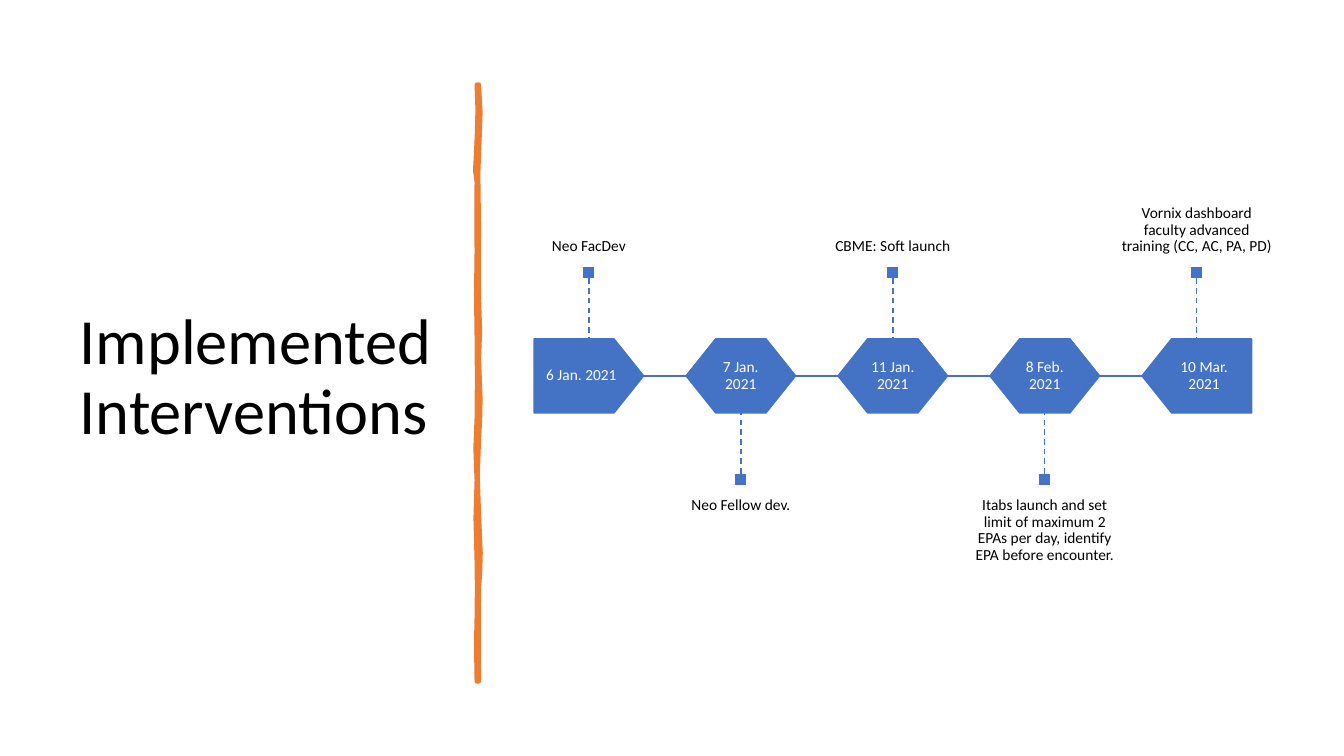
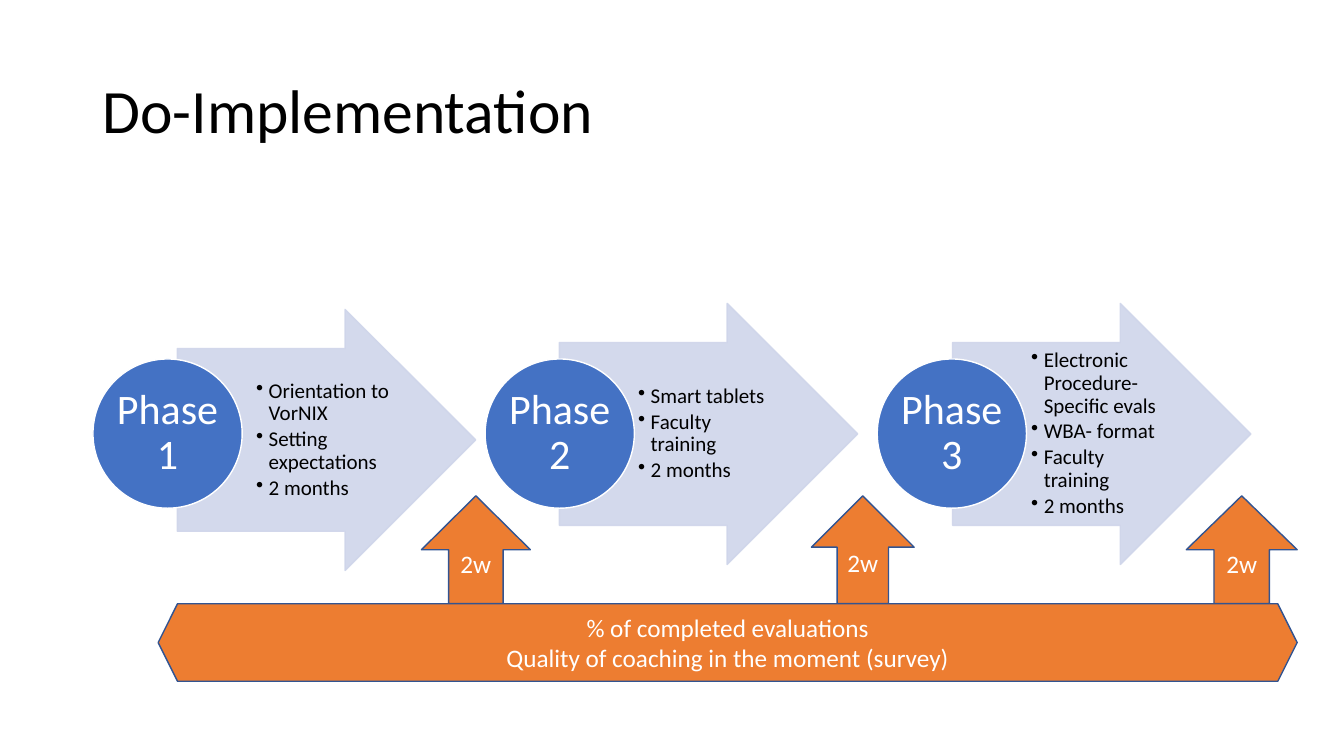
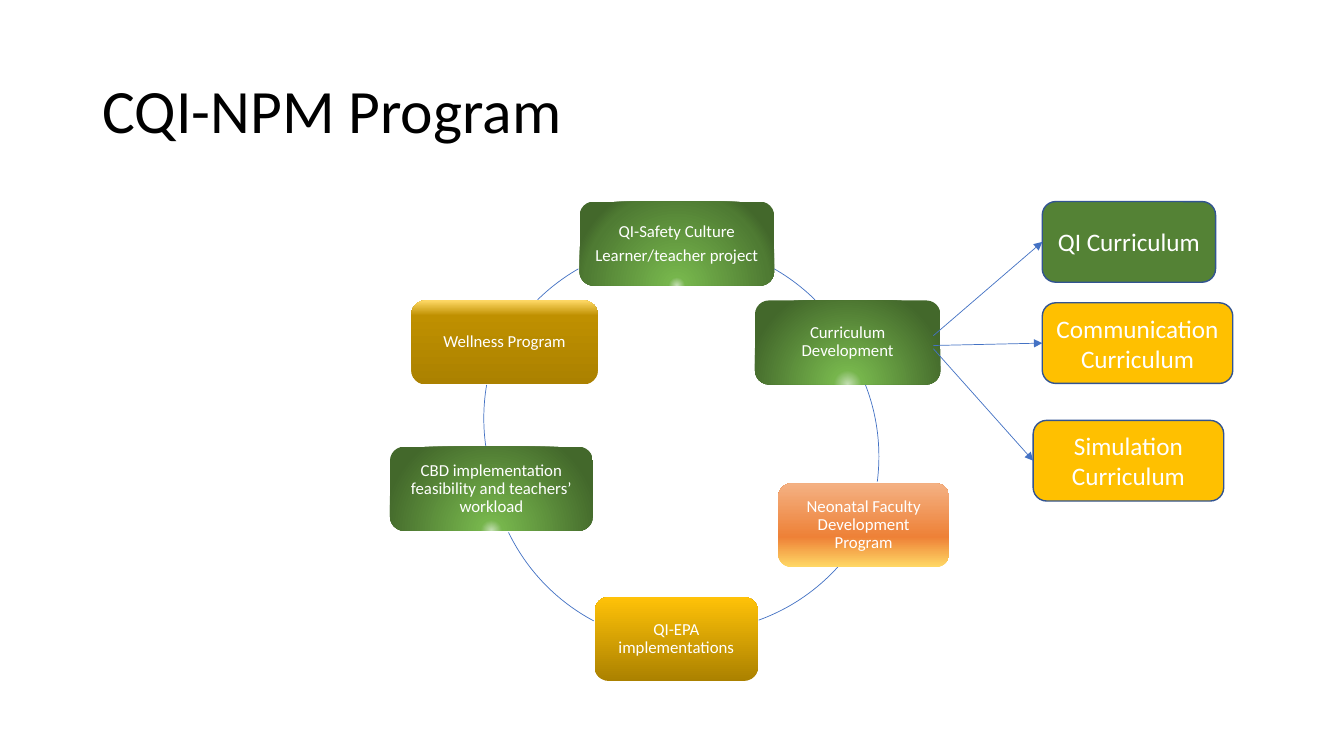
from lxml.etree import SubElement
from pptx import Presentation
from pptx.dml.color import RGBColor
from pptx.enum.dml import MSO_LINE
from pptx.enum.shapes import MSO_CONNECTOR, MSO_SHAPE as Preset
from pptx.enum.text import MSO_ANCHOR as Anchor, MSO_AUTO_SIZE, PP_ALIGN as Align
from pptx.oxml.ns import qn
from pptx.util import Pt

COLORS = {
    "blue": "4472C4", "navy": "325491", "pale": "CFD5EA", "orange": "ED7D31",
    "green": "548235", "gold": "FFC000", "white": "FFFFFF", "black": "000000",
}
GREEN_STOPS = [(0, "C5E0B4"), (10, "76B54C"), (100, "43682B")]
WIDE_GREEN_STOPS = [(0, "C5E0B4"), (14, "76B54C"), (100, "43682B")]
DEEP_GREEN_STOPS = [(0, "C5E0B4"), (8, "76B54C"), (87, "4F7B33"), (100, "43682B")]
ORANGE_STOPS = [(0, "FFD966"), (36, "EE8137"), (100, "F4B183")]
GOLD_STOPS = [(0, "AB8100"), (100, "FFC208"), (100, "FFD966")]
DARK_GOLD_STOPS = [(0, "AB8100"), (82, "BF9000"), (100, "FFD966")]


def color(name):
    """Return the named colour."""
    return RGBColor.from_string(COLORS[name])


def write(shape, text, size=18, ink="white", align=Align.CENTER, anchor=Anchor.MIDDLE,
          margins=(7.2, 3.6, 7.2, 3.6), spacing=0.9, after=0, bullet=False):
    """Write text into a shape, one paragraph per line."""
    frame = shape.text_frame
    frame.word_wrap = True
    frame.auto_size = MSO_AUTO_SIZE.NONE
    frame.vertical_anchor = anchor
    (frame.margin_left, frame.margin_top,
     frame.margin_right, frame.margin_bottom) = [Pt(margin) for margin in margins]
    for index, line in enumerate(text.split("\n")):
        paragraph = frame.add_paragraph() if index else frame.paragraphs[0]
        paragraph.alignment = align
        paragraph.line_spacing = spacing
        paragraph.space_before = Pt(0)
        paragraph.space_after = Pt(after)
        run = paragraph.add_run()
        run.text = line
        run.font.name = "Calibri"
        run.font.size = Pt(size)
        run.font.color.rgb = color(ink)
        if bullet:
            properties = paragraph._p.get_or_add_pPr()
            properties.set("marL", str(Pt(9)))
            properties.set("indent", str(Pt(-9)))
            SubElement(properties, qn("a:buChar")).set("char", "•")


class Deck:
    """Holds the presentation, its style and the current slide."""

    def __init__(self):
        """Start a widescreen presentation."""
        self.presentation = Presentation()
        self.presentation.slide_width = Pt(960)
        self.presentation.slide_height = Pt(540)
        self.slide = None

    def start(self, title, box=(66, 28.8, 828, 104.4), size=44):
        """Add a slide with its title."""
        layout = self.presentation.slide_layouts[5]
        self.slide = self.presentation.slides.add_slide(layout)
        shape = self.slide.shapes.title
        shape.left, shape.top, shape.width, shape.height = [Pt(value) for value in box]
        write(shape, title, size=size, ink="black", align=Align.LEFT)

    def paint(self, shape, fill=None, line=None, width=1):
        """Set fill and outline and drop the shadow."""
        shape.shadow.inherit = False
        if fill:
            shape.fill.solid()
            shape.fill.fore_color.rgb = color(fill)
        else:
            shape.fill.background()
        if line:
            shape.line.color.rgb = color(line)
            shape.line.width = Pt(width)
        else:
            shape.line.fill.background()

    def shape(self, preset, box, fill=None, line=None, width=1, adjustments=()):
        """Add a preset shape."""
        shape = self.slide.shapes.add_shape(preset, *[Pt(value) for value in box])
        for index, value in enumerate(adjustments):
            shape.adjustments[index] = value
        self.paint(shape, fill, line, width)
        return shape

    def text(self, box, text, **style):
        """Add a text box."""
        shape = self.slide.shapes.add_textbox(*[Pt(value) for value in box])
        write(shape, text, **style)

    def fade(self, shape, percent):
        """Make fill and line partly transparent."""
        for node in shape._element.spPr.iter(qn("a:srgbClr")):
            SubElement(node, qn("a:alpha")).set("val", str(percent * 1000))

    def gradient(self, shape, stops, radial):
        """Fill a shape with a radial or upward gradient."""
        shape.fill.gradient()
        gradient = shape._element.spPr.find(qn("a:gradFill"))
        for child in list(gradient):
            gradient.remove(child)
        stop_list = SubElement(gradient, qn("a:gsLst"))
        for position, value in stops:
            stop = SubElement(stop_list, qn("a:gs"))
            stop.set("pos", str(position * 1000))
            SubElement(stop, qn("a:srgbClr")).set("val", value)
        if radial:
            route = SubElement(gradient, qn("a:path"))
            route.set("path", "circle")
            focus = SubElement(route, qn("a:fillToRect"))
            for side, percent in zip("ltrb", (50, 130, 50, -30)):
                focus.set(side, str(percent * 1000))
        else:
            SubElement(gradient, qn("a:lin")).set("ang", "16200000")

    def line(self, start, end, width=1, dashed=False, arrow=False):
        """Add a straight blue connector."""
        connector = self.slide.shapes.add_connector(
            MSO_CONNECTOR.STRAIGHT, *[Pt(value) for value in (*start, *end)])
        connector.line.color.rgb = color("blue")
        connector.line.width = Pt(width)
        if dashed:
            connector.line.dash_style = MSO_LINE.DASH
        if arrow:
            SubElement(connector.line._get_or_add_ln(), qn("a:tailEnd")).set("type", "triangle")
        SubElement(connector._element.spPr, qn("a:effectLst"))
        return connector

    def outline(self, points, fill, width):
        """Add a closed freeform through the points."""
        corners = [(Pt(x), Pt(y)) for x, y in points]
        builder = self.slide.shapes.build_freeform(*corners[0])
        builder.add_line_segments(corners[1:], close=True)
        self.paint(builder.convert_to_shape(), fill, fill, width)


def build_timeline(deck):
    """Build the timeline of interventions."""
    deck.start("Implemented Interventions", box=(49.7, 50.4, 269.3, 439.9), size=46)
    right_edge = [
        (342, 60.5), (343.1, 80), (342.6, 95), (341.5, 124), (342, 163), (341.8, 188),
        (342, 212), (342.8, 237), (342, 256), (343.1, 285), (342.8, 300), (342, 314),
        (341.1, 340), (342, 367), (343.2, 395), (342.8, 410), (342, 420), (341.8, 455), (342, 486.7)]
    left_edge = [
        (340.6, 486.7), (340.2, 460), (340.6, 441), (340.8, 420), (340.6, 401),
        (339.8, 370), (340.6, 343), (339.7, 320), (340.6, 299), (340.8, 270),
        (340.6, 241), (340.2, 210), (340.6, 180), (340.4, 150), (340.6, 130),
        (339.5, 122), (340.8, 95), (341.2, 78), (340.6, 60.5)]
    deck.outline(right_edge + left_edge, "orange", 3.25)

    events = [
        ("6 Jan. 2021", "Neo FacDev"),
        ("7 Jan. 2021", "Neo Fellow dev."),
        ("11 Jan. 2021", "CBME: Soft launch"),
        ("8 Feb. 2021", "Itabs launch and set limit of maximum 2 EPAs per day, "
                        "identify EPA before encounter."),
        ("10 Mar. 2021", "Vornix dashboard faculty advanced training (CC, AC, PA, PD)"),
    ]
    step, width, top, height, marker_size = 108.55, 78.3, 242, 53, 8.8
    last = len(events) - 1
    date_style = {"size": 11, "margins": (6.5, 6.5, 6.5, 6.5)}
    for index, (date, label) in enumerate(events):
        left = 381.5 + step * index
        center = left + width / 2
        above = index % 2 == 0
        preset = Preset.PENTAGON if index in (0, last) else Preset.HEXAGON
        node = deck.shape(preset, (left, top, width, height), "blue", "blue", adjustments=[0.4])
        if index == last:
            node.rotation = 180
            deck.text((left + 10.6, top, width - 10.6, height), date, **date_style)
        else:
            write(node, date, **date_style)
            middle = top + height / 2
            deck.line((left + width, middle), (left + step, middle))
        marker_top = 190.1 if above else 338.4
        marker = deck.shape(Preset.RECTANGLE, (center - marker_size / 2, marker_top,
                                               marker_size, marker_size), "blue", "white")
        marker_edge, node_edge = (marker_top + marker_size, top) if above else (marker_top, top + height)
        stem = deck.line((center, marker_edge), (center, node_edge), dashed=True)
        stem.begin_connect(marker, 2 if above else 0)
        deck.text((center - step / 2, 50.4 if above else 347.2, step, 139.7), label,
                  size=11, ink="black", margins=(0, 7.9, 0, 7.9),
                  anchor=Anchor.BOTTOM if above else Anchor.TOP)


def build_phases(deck):
    """Build the three phases with their checkpoints."""
    deck.start("Do-Implementation")
    phases = [
        (126.7, 221, "Orientation to VorNIX\nSetting expectations\n2 months"),
        (399.6, 216.7, "Smart tablets\nFaculty training\n2 months"),
        (680.4, 216.7, "Electronic Procedure-Specific evals\nWBA- format\nFaculty training\n2 months"),
    ]
    for index, (left, top, tasks) in enumerate(phases):
        arrow = deck.shape(Preset.RIGHT_ARROW, (left, top, 213.1, 186.5), "pale", "pale",
                           adjustments=[0.7, 0.5])
        deck.fade(arrow, 90)
        deck.text((left + 53.5, top + 28, 104.4, 130.3), tasks, size=15, ink="black",
                  align=Align.LEFT, margins=(2.7, 0.7, 1.4, 0.7), after=2.25, bullet=True)
        circle = deck.shape(Preset.OVAL, (66.4 + 280.1 * index, 256.4, 106.6, 106.6), "blue", "white")
        write(circle, f"Phase {index + 1}", size=30, margins=(1.4, 1.4, 1.4, 1.4))
    for left, width in [(301, 77.8), (579.6, 73.4), (847.4, 79.2)]:
        checkpoint = deck.shape(Preset.UP_ARROW, (left, 354.2, width, 77), "orange", "navy")
        write(checkpoint, "2w", spacing=1)
    measures = deck.shape(Preset.HEXAGON, (113, 431.3, 813.6, 55.4), "orange", "navy")
    write(measures, "% of completed evaluations\nQuality of coaching in the moment (survey)", spacing=1)


def build_program(deck):
    """Build the programme cycle and its curricula."""
    deck.start("CQI-NPM Program")
    arcs = [
        (342, 173.5, 299.7, 314.6), (345.6, 185, 338.8, 7.3), (352.8, 169.2, 42.1, 70.1),
        (349.2, 177.8, 118, 154.2), (345.6, 157.7, 171.8, 189.7), (342, 173.5, 225.4, 240.3),
    ]
    for left, top, start, end in arcs:
        deck.shape(Preset.ARC, (left, top, 282.2, 282.2), line="blue", width=0.5,
                   adjustments=[start * 0.6, end * 0.6])
    topics = [
        (414, 144, 139, "QI-Safety Culture\nLearner/teacher project", DEEP_GREEN_STOPS, True),
        (539.3, 214.6, 132.5, "Curriculum Development", WIDE_GREEN_STOPS, True),
        (555.8, 345.2, 122.4, "Neonatal Faculty Development Program", ORANGE_STOPS, False),
        (424.8, 426.4, 116.6, "QI-EPA implementations", GOLD_STOPS, False),
        (278.6, 319.1, 144.9, "CBD implementation feasibility and teachers’ workload", GREEN_STOPS, True),
        (293.8, 214.6, 133.2, "Wellness Program", DARK_GOLD_STOPS, False),
    ]
    for left, top, width, label, stops, radial in topics:
        topic = deck.shape(Preset.ROUNDED_RECTANGLE, (left, top, width, 60))
        deck.gradient(topic, stops, radial)
        write(topic, label, size=12, margins=(3.6, 3.6, 3.6, 3.6), after=4.2)
    curricula = [
        (744.5, 144, 123.8, "QI Curriculum", "green", 239.8),
        (744.5, 216.3, 136.1, "Communication Curriculum", "gold", 246.8),
        (738, 300.3, 136.1, "Simulation Curriculum", "gold", 249.1),
    ]
    for left, top, width, label, fill, start in curricula:
        curriculum = deck.shape(Preset.ROUNDED_RECTANGLE, (left, top, width, 57.6), fill, "navy")
        write(curriculum, label, spacing=1)
        arrow = deck.line((666.7, start), (left, top + 28.8), width=0.5, arrow=True)
        arrow.end_connect(curriculum, 1)


def main():
    """Build and save the presentation."""
    deck = Deck()
    build_timeline(deck)
    build_phases(deck)
    build_program(deck)
    deck.presentation.save("out.pptx")


if __name__ == "__main__":
    main()
